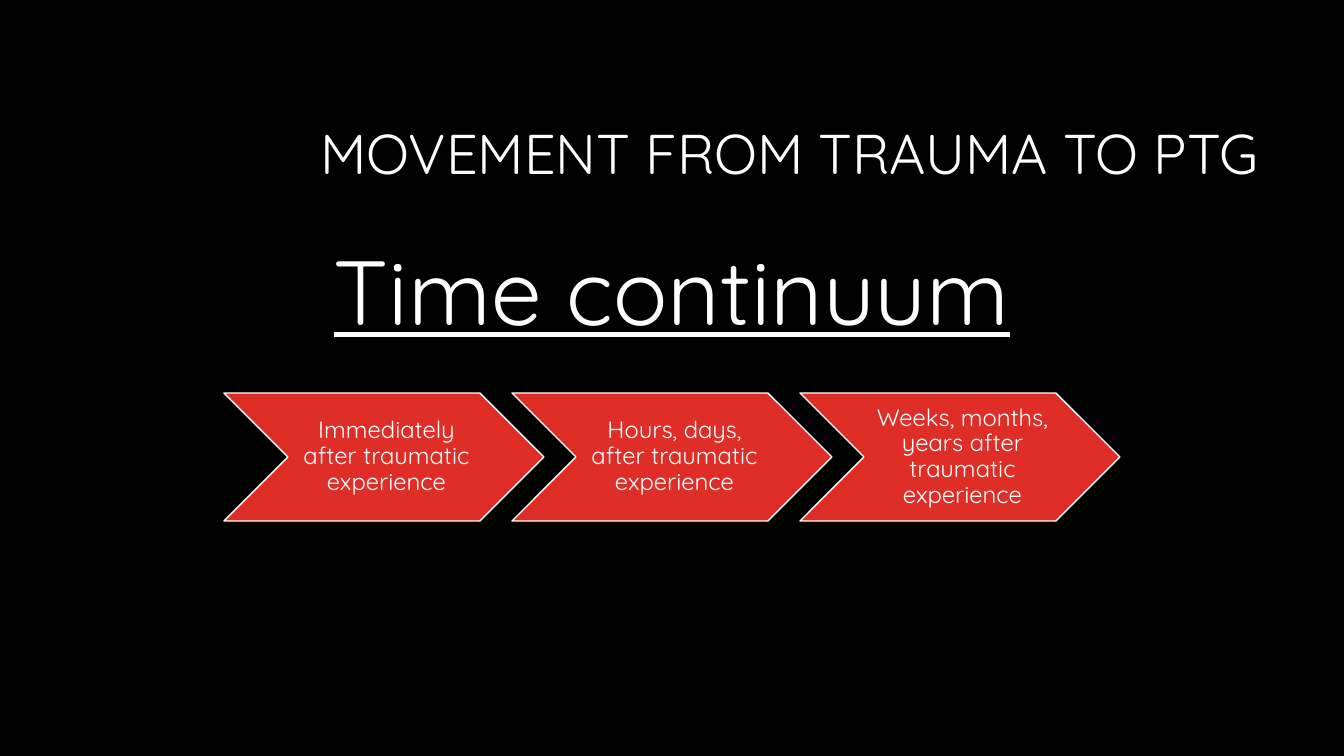
from pptx import Presentation
from pptx.dml.color import RGBColor
from pptx.enum.shapes import MSO_SHAPE
from pptx.enum.text import MSO_ANCHOR, MSO_AUTO_SIZE, PP_ALIGN
from pptx.util import Emu, Pt

TITLE = "MOVEMENT FROM TRAUMA TO PTG"
HEADING = "Time continuum"
STAGES = [
    "Immediately after traumatic experience",
    "Hours, days, after traumatic experience",
    "Weeks, months, years after traumatic experience",
]
FONT = "Quicksand"
BLACK, WHITE, RED = "000000", "FFFFFF", "DF2E28"
SLIDE_W, SLIDE_H = 1344, 756
STAGE_W, STAGE_H, STAGE_Y = 320, 128, 393
STAGE_STEP = 288


def px(n):
    return Emu(round(n * 914400 / 100.8))


def rgb(color):
    return RGBColor.from_string(color)


def write(shape, text, size, align, anchor, underline=None):
    tf = shape.text_frame
    tf.text = text
    tf.word_wrap = True
    tf.auto_size = MSO_AUTO_SIZE.NONE
    tf.vertical_anchor = anchor
    p = tf.paragraphs[0]
    p.alignment = align
    p.line_spacing = 0.9
    font = p.runs[0].font
    font.name = FONT
    font.size = Pt(size)
    font.underline = underline
    font.color.rgb = rgb(WHITE)
    return tf


def place(shape, x, y, w, h):
    shape.left, shape.top, shape.width, shape.height = map(px, (x, y, w, h))


prs = Presentation()
prs.slide_width, prs.slide_height = px(SLIDE_W), px(SLIDE_H)
s = prs.slides.add_slide(prs.slide_layouts[5])
s.background.fill.solid()
s.background.fill.fore_color.rgb = rgb(BLACK)

title = s.shapes.title
place(title, 205, 85, 1064, 142)
write(title, TITLE, 40, PP_ALIGN.RIGHT, MSO_ANCHOR.MIDDLE)

heading = s.shapes.add_textbox(*map(px, (76, 242, 1192, 444)))
write(heading, HEADING, 65, PP_ALIGN.CENTER, MSO_ANCHOR.TOP, True)

row_w = STAGE_STEP * (len(STAGES) - 1) + STAGE_W
row_x = (SLIDE_W - row_w) // 2
for i, stage in enumerate(STAGES):
    box = map(px, (row_x + i * STAGE_STEP, STAGE_Y, STAGE_W, STAGE_H))
    sp = s.shapes.add_shape(MSO_SHAPE.CHEVRON, *box)
    sp.shadow.inherit = False
    sp.fill.solid()
    sp.fill.fore_color.rgb = rgb(RED)
    sp.line.color.rgb = rgb(WHITE)
    sp.line.width = Pt(1)
    tf = write(sp, stage, 17, PP_ALIGN.CENTER, MSO_ANCHOR.MIDDLE)
    tf.margin_left = px(7)
    tf.margin_top = tf.margin_right = tf.margin_bottom = px(2)

prs.save("out.pptx")
